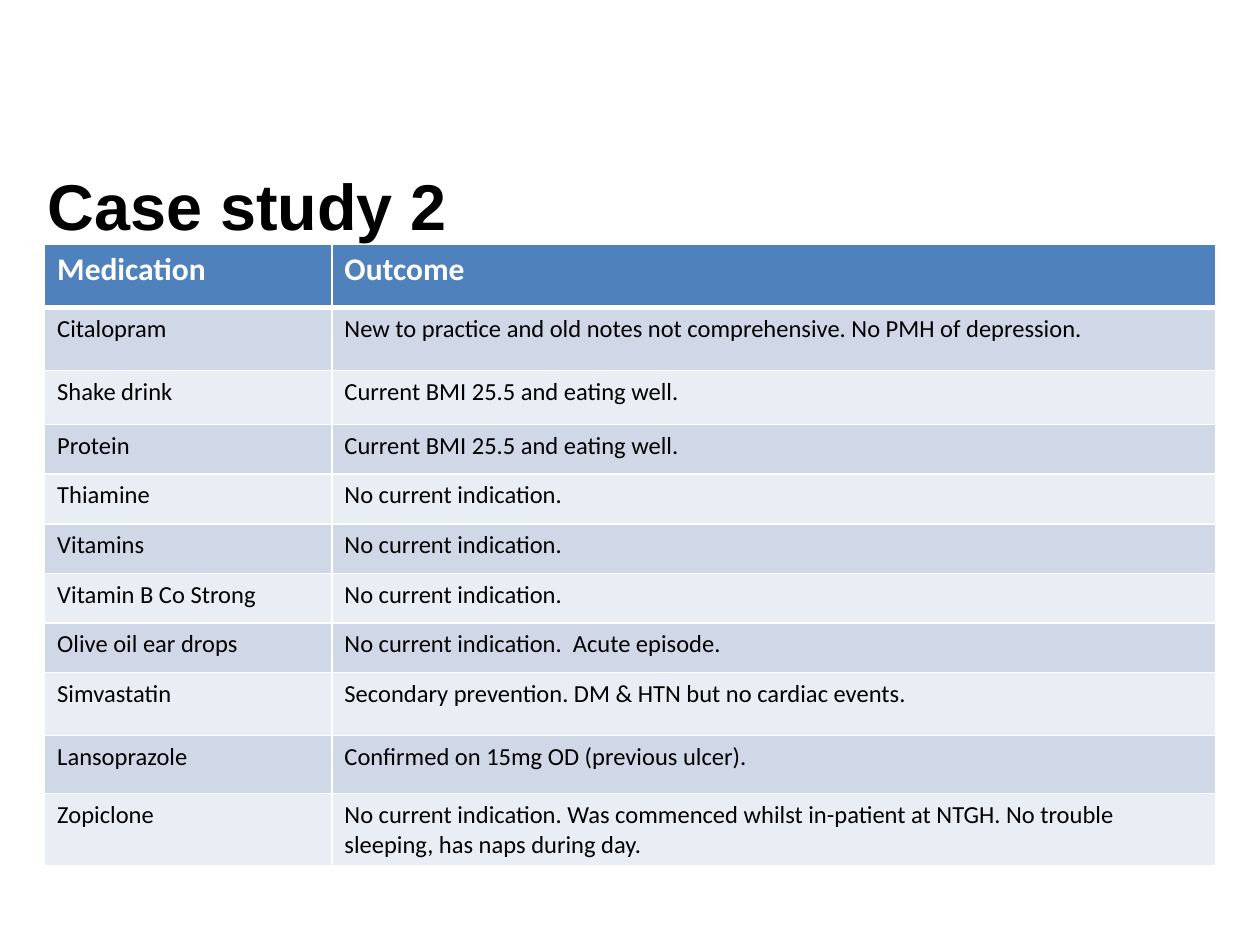
from dataclasses import dataclass

import lxml.etree
import pptx
import pptx.dml.color
import pptx.enum.text
import pptx.oxml.ns
import pptx.slide
import pptx.table
import pptx.text.text
import pptx.util
from pptx.util import Cm


@dataclass(frozen=True)
class Theme:
    title_font: str = "Arial"
    table_font: str = "Calibri"
    title_size: float = 37
    header_size: float = 18
    body_size: float = 14
    text: str = "000000"
    white: str = "FFFFFF"
    header_fill: str = "4F81BD"
    band_fills: tuple[str, str] = ("D0D8E8", "E9EDF4")
    thin_line: float = 1
    thick_line: float = 3


@dataclass(frozen=True)
class Review:
    medication: str
    outcome: str
    height: float = 1.0


THEME = Theme()
COLUMN_WIDTHS = (5.79, 17.81)
HEADER = Review("Medication", "Outcome", 1.27)
REVIEWS = (
    Review("Citalopram", "New to practice and old notes not comprehensive. No PMH of depression.", 1.27),
    Review("Shake drink", "Current BMI 25.5 and eating well.", 1.09),
    Review("Protein", "Current BMI 25.5 and eating well."),
    Review("Thiamine", "No current indication."),
    Review("Vitamins", "No current indication."),
    Review("Vitamin B Co Strong", "No current indication."),
    Review("Olive oil ear drops", "No current indication.  Acute episode."),
    Review("Simvastatin", "Secondary prevention. DM & HTN but no cardiac events.", 1.27),
    Review("Lansoprazole", "Confirmed on 15mg OD (previous ulcer).", 1.17),
    Review(
        "Zopiclone",
        "No current indication. Was commenced whilst in-patient at NTGH. "
        "No trouble sleeping, has naps during day.",
        1.45,
    ),
)


def add_run(
    para: pptx.text.text._Paragraph, text: str, font: str, size: float, color: str, bold: bool
) -> None:
    span = para.add_run()
    span.text = text
    span.font.name = font
    span.font.size = pptx.util.Pt(size)
    span.font.bold = bold
    span.font.color.rgb = pptx.dml.color.RGBColor.from_string(color)


def set_borders(cell: pptx.table._Cell, widths: dict[str, float]) -> None:
    """Draw white cell borders, with widths in points keyed by side tag."""
    properties = cell._tc.get_or_add_tcPr()
    qualify = pptx.oxml.ns.qn
    for position, (side, width) in enumerate(widths.items()):
        line = lxml.etree.Element(qualify(f"a:{side}"), w=str(pptx.util.Pt(width)))
        fill = lxml.etree.SubElement(line, qualify("a:solidFill"))
        lxml.etree.SubElement(fill, qualify("a:srgbClr"), val=THEME.white)
        properties.insert(position, line)


def fill_row(table: pptx.table.Table, index: int, review: Review) -> None:
    is_header = index == 0
    table.rows[index].height = Cm(review.height)
    widths = {
        "lnL": THEME.thin_line,
        "lnR": THEME.thin_line,
        "lnT": THEME.thick_line if index == 1 else THEME.thin_line,
        "lnB": THEME.thick_line if is_header else THEME.thin_line,
    }
    fill = THEME.header_fill if is_header else THEME.band_fills[(index - 1) % 2]
    for column, text in enumerate((review.medication, review.outcome)):
        cell = table.cell(index, column)
        cell.fill.solid()
        cell.fill.fore_color.rgb = pptx.dml.color.RGBColor.from_string(fill)
        set_borders(cell, widths)
        add_run(
            cell.text_frame.paragraphs[0],
            text,
            THEME.table_font,
            THEME.header_size if is_header else THEME.body_size,
            THEME.white if is_header else THEME.text,
            is_header,
        )


def add_title(page: pptx.slide.Slide, text: str) -> None:
    box = page.shapes.title
    box.left, box.top, box.width, box.height = Cm(0.71), Cm(3.12), Cm(24), Cm(2.01)
    frame = box.text_frame
    frame.auto_size = pptx.enum.text.MSO_AUTO_SIZE.NONE
    frame.vertical_anchor = pptx.enum.text.MSO_ANCHOR.MIDDLE
    para = frame.paragraphs[0]
    para.alignment = pptx.enum.text.PP_ALIGN.LEFT
    add_run(para, text, THEME.title_font, THEME.title_size, THEME.text, True)


def add_review_table(page: pptx.slide.Slide) -> None:
    rows = (HEADER, *REVIEWS)
    table = page.shapes.add_table(
        len(rows),
        len(COLUMN_WIDTHS),
        Cm(0.9),
        Cm(4.93),
        Cm(sum(COLUMN_WIDTHS)),
        Cm(sum(row.height for row in rows)),
    ).table
    for column, width in zip(table.columns, COLUMN_WIDTHS):
        column.width = Cm(width)
    for index, review in enumerate(rows):
        fill_row(table, index, review)


def main() -> None:
    deck = pptx.Presentation()
    deck.slide_width, deck.slide_height = Cm(25.4), Cm(19.05)
    page = deck.slides.add_slide(deck.slide_layouts.get_by_name("Title Only"))
    add_title(page, "Case study 2")
    add_review_table(page)
    deck.save("out.pptx")


if __name__ == "__main__":
    main()
